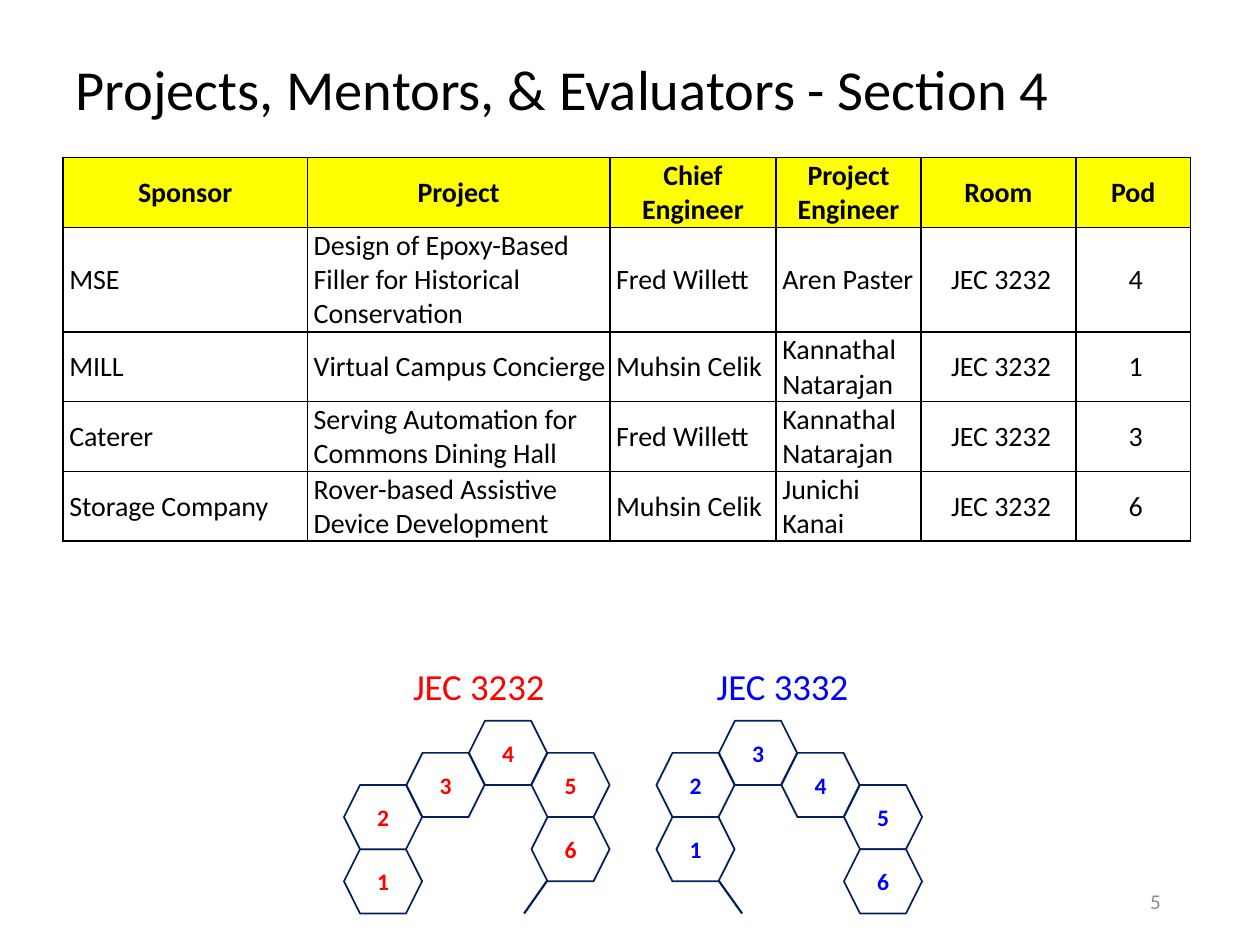
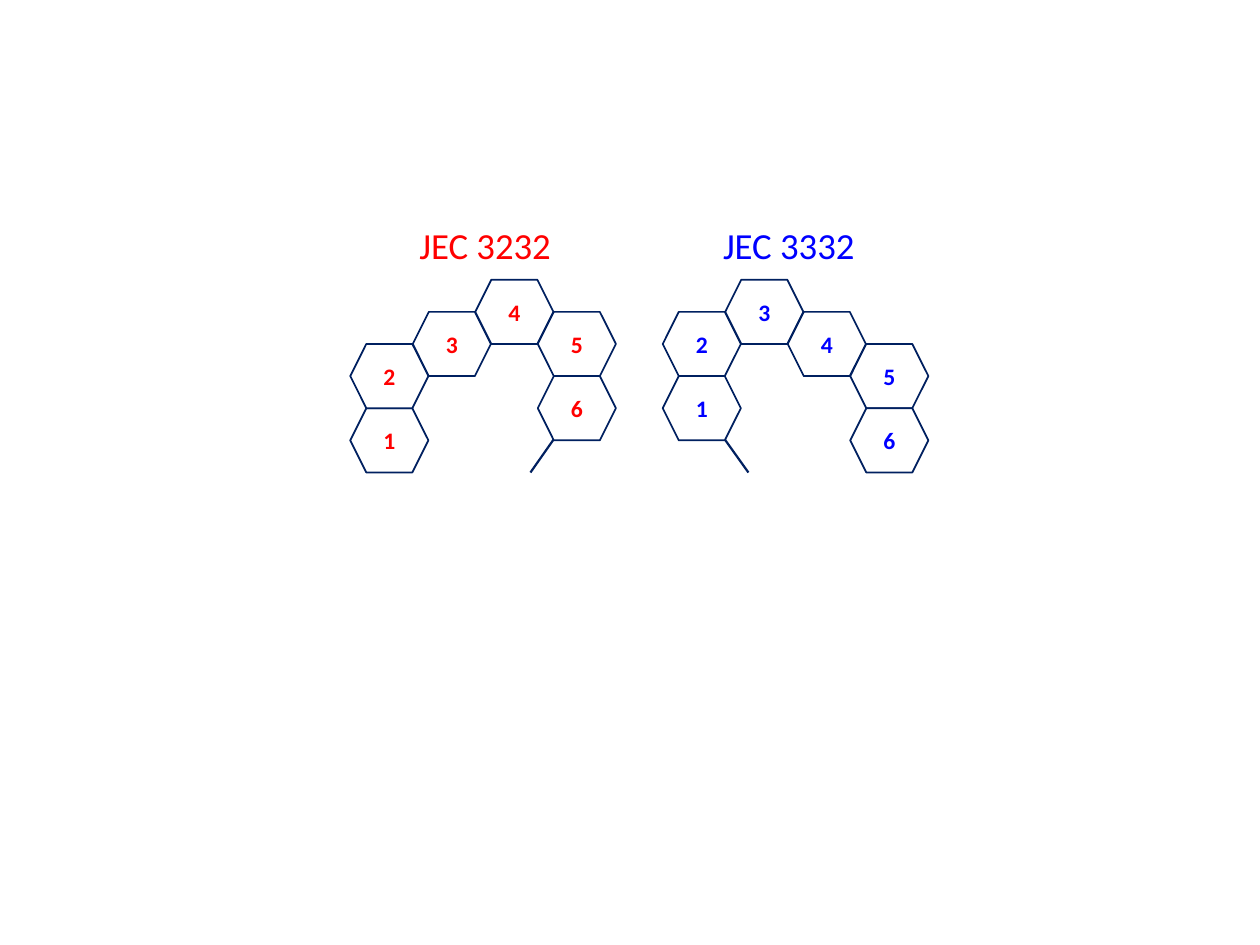
from dataclasses import dataclass
from lxml import etree
from pptx import Presentation
from pptx.dml.color import RGBColor
from pptx.enum.shapes import MSO_CONNECTOR, MSO_SHAPE
from pptx.enum.text import MSO_ANCHOR as ANCHOR, MSO_AUTO_SIZE as AUTO, PP_ALIGN as ALIGN
from pptx.oxml.ns import qn
from pptx.util import Inches, Pt


@dataclass(frozen=True)
class Theme:
    font: str = "Calibri"
    black: str = "000000"
    white: str = "FFFFFF"
    yellow: str = "FFFF00"
    navy: str = "002060"
    red: str = "FF0000"
    blue: str = "0000FF"
    gray: str = "8C8C8C"
    title_size: float = 32.3
    room_size: float = 21
    cell_size: float = 16
    pod_size: float = 13.5
    number_size: float = 12


T = Theme()
rgb = RGBColor.from_string

POD_W, POD_H = 0.62, 0.51
STEP_X, STEP_Y = 0.8 * POD_W, POD_H / 2

# Pods 1 to 6 as (column, half row); the door line and label are relative to the room.
ROOMS = [
    dict(name="JEC 3332", color=T.blue, left=2.48, label=0.38, door=(0.13, 0.68),
         pods=[(0, 3), (0, 1), (1, 0), (2, 1), (3, 2), (3, 4)]),
    dict(name="JEC 3232", color=T.red, left=0, label=0.45, door=(1.97, 1.43),
         pods=[(0, 4), (0, 2), (1, 1), (2, 0), (3, 1), (3, 3)]),
]

HEADERS = ["Sponsor", "Project", "Chief Engineer", "Project Engineer", "Room", "Pod"]
PROJECTS = [
    ["MSE", "Design of Epoxy-Based Filler for Historical Conservation",
     "Fred Willett", "Aren Paster", "JEC 3232", "4"],
    ["MILL", "Virtual Campus Concierge",
     "Muhsin Celik", "Kannathal Natarajan", "JEC 3232", "1"],
    ["Caterer", "Serving Automation for Commons Dining Hall",
     "Fred Willett", "Kannathal Natarajan", "JEC 3232", "3"],
    ["Storage Company", "Rover-based Assistive Device Development",
     "Muhsin Celik", "Junichi Kanai", "JEC 3232", "6"],
]
COL_WIDTHS = [1.94, 2.4, 1.32, 1.15, 1.23, 0.91]
ROW_HEIGHTS = [0.55, 0.83, 0.55, 0.55, 0.55]


def write(tf, text, size, color, bold=False, align=ALIGN.LEFT):
    tf.text = text
    p = tf.paragraphs[0]
    p.alignment = align
    font = p.runs[0].font
    font.name, font.size, font.bold = T.font, Pt(size), bold
    font.color.rgb = rgb(color)


def draw_rooms(slide, left, top):
    """Draw both rooms with their numbered pods, from the top left pod corner."""
    shapes = slide.shapes.add_group_shape().shapes
    for room in ROOMS:
        x = left + room["left"]
        label = shapes.add_textbox(Inches(x + room["label"]), Inches(top - 0.5),
                                   Inches(1.26), Inches(0.5))
        label.fill.solid()
        label.fill.fore_color.rgb = rgb(T.white)
        label.text_frame.word_wrap = False
        label.text_frame.auto_size = AUTO.SHAPE_TO_FIT_TEXT
        write(label.text_frame, room["name"], T.room_size, room["color"])

        start, end = room["door"]
        door = shapes.add_connector(MSO_CONNECTOR.STRAIGHT, Inches(x + start), Inches(top + 0.76),
                                    Inches(x + end), Inches(top + 1.53))
        door.line.color.rgb = rgb(T.navy)
        door.line.width = Pt(1.25)
        etree.SubElement(door._element.spPr, qn("a:effectLst"))

        for number, (col, row) in enumerate(room["pods"], 1):
            pod = shapes.add_shape(MSO_SHAPE.HEXAGON, Inches(x + col * STEP_X),
                                   Inches(top + row * STEP_Y), Inches(POD_W), Inches(POD_H))
            pod.shadow.inherit = False
            pod.fill.solid()
            pod.fill.fore_color.rgb = rgb(T.white)
            pod.line.color.rgb = rgb(T.navy)
            pod.line.width = Pt(1)
            tf = pod.text_frame
            tf.margin_left = tf.margin_right = tf.margin_top = tf.margin_bottom = 0
            tf.vertical_anchor = ANCHOR.MIDDLE
            write(tf, str(number), T.pod_size, room["color"], True, ALIGN.CENTER)


prs = Presentation()
prs.slide_width, prs.slide_height = Inches(10), Inches(7.5)

# Section 4 projects
s = prs.slides.add_slide(prs.slide_layouts[5])
title = s.shapes.title
title.left, title.top, title.width, title.height = map(Inches, (0.5, 0.3, 9, 0.87))
title.text_frame.vertical_anchor = ANCHOR.MIDDLE
title.text_frame.auto_size = AUTO.NONE
write(title.text_frame, "Projects, Mentors, & Evaluators - Section 4", T.title_size, T.black)
title.text_frame.paragraphs[0].line_spacing = 0.9

table = s.shapes.add_table(len(ROW_HEIGHTS), len(COL_WIDTHS), Inches(0.5), Inches(1.25),
                           Inches(sum(COL_WIDTHS)), Inches(sum(ROW_HEIGHTS))).table
for column, width in zip(table.columns, COL_WIDTHS):
    column.width = Inches(width)
for row, height in zip(table.rows, ROW_HEIGHTS):
    row.height = Inches(height)

for i, values in enumerate([HEADERS] + PROJECTS):
    header = i == 0
    for j, value in enumerate(values):
        cell = table.cell(i, j)
        tc_pr = cell._tc.get_or_add_tcPr()
        for side in ("lnL", "lnR", "lnT", "lnB"):
            ln = etree.SubElement(tc_pr, qn(f"a:{side}"), w=str(Pt(1)))
            fill = etree.SubElement(ln, qn("a:solidFill"))
            etree.SubElement(fill, qn("a:srgbClr"), val=T.black)
        cell.fill.solid()
        cell.fill.fore_color.rgb = rgb(T.yellow if header else T.white)
        cell.vertical_anchor = ANCHOR.MIDDLE
        cell.margin_left = Inches(0.01 if header else 0.05)
        cell.margin_right = cell.margin_top = Inches(0.01)
        cell.margin_bottom = 0
        centered = header or HEADERS[j] in ("Room", "Pod")
        write(cell.text_frame, value, T.cell_size, T.black, header,
              ALIGN.CENTER if centered else ALIGN.LEFT)

number_box = s.shapes.add_textbox(Inches(7.06), Inches(6.95), Inches(2.25), Inches(0.4))
number_box.text_frame.word_wrap = True
number_box.text_frame.vertical_anchor = ANCHOR.MIDDLE
write(number_box.text_frame, "5", T.number_size, T.gray, align=ALIGN.RIGHT)
draw_rooms(s, 2.73, 5.72)

# Room map alone
s = prs.slides.add_slide(prs.slide_layouts[6])
draw_rooms(s, 2.78, 2.22)

prs.save("out.pptx")
